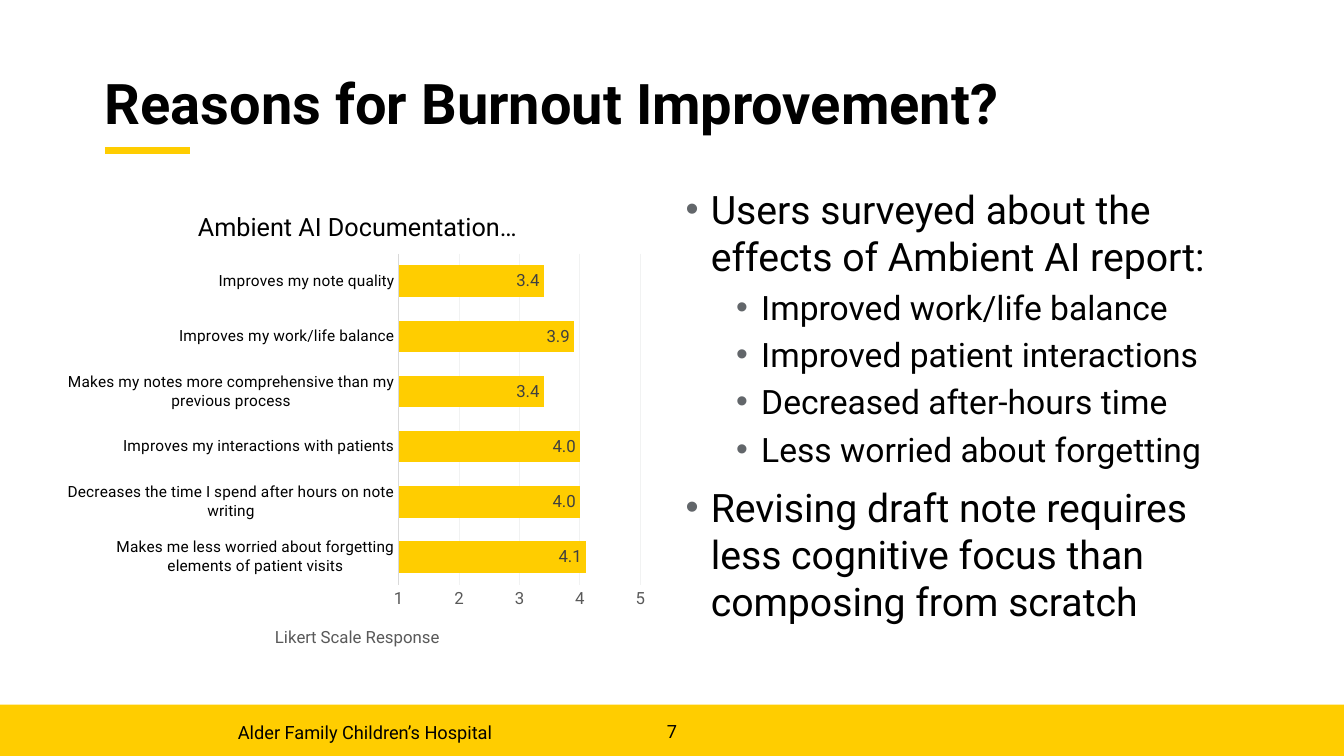
from lxml.etree import SubElement
from pptx import Presentation
from pptx.chart.data import CategoryChartData
from pptx.dml.color import RGBColor
from pptx.enum.chart import XL_CHART_TYPE as ChartType
from pptx.enum.chart import XL_LABEL_POSITION as LabelPosition
from pptx.enum.chart import XL_TICK_MARK as TickMark
from pptx.enum.shapes import MSO_CONNECTOR as Connector
from pptx.enum.shapes import MSO_SHAPE as Shape
from pptx.enum.text import MSO_ANCHOR as Anchor
from pptx.enum.text import PP_ALIGN as Align
from pptx.oxml import parse_xml
from pptx.oxml.ns import nsdecls, qn
from pptx.util import Inches, Pt

FONT = "Roboto"
GOLD, BLACK, GRAY = "FFCD00", "000000", "595959"
BULLET_GRAY, LABEL_GRAY = "62666A", "404040"
AXIS_LINE, GRID_LINE = "D9D9D9", "F1F2F2"

# Font size, indent and space before (points, inches), bullet size (percent)
LEVELS = [
    {"size": 28, "indent": 0.25, "before": 10, "bullet": 95},
    {"size": 24, "indent": 0.75, "before": 5, "bullet": 100},
]
FINDINGS = [
    (0, "Users surveyed about the effects of Ambient AI report:"),
    (1, "Improved work/life balance"),
    (1, "Improved patient interactions"),
    (1, "Decreased after-hours time"),
    (1, "Less worried about forgetting"),
    (0, "Revising draft note requires less cognitive focus than "
        "composing from scratch"),
]
RESPONSES = {
    "Makes me less worried about forgetting elements of patient visits": 4.1,
    "Decreases the time I spend after hours on note writing": 4.0,
    "Improves my interactions with patients": 4.0,
    "Makes my notes more comprehensive than my previous process": 3.4,
    "Improves my work/life balance": 3.9,
    "Improves my note quality": 3.4,
}


def color(hex_value):
    return RGBColor.from_string(hex_value)


def set_values(target, values):
    for name, value in values.items():
        setattr(target, name, value)


def style_font(font, size, hex_value=BLACK, bold=False):
    set_values(font, {"name": FONT, "size": Pt(size), "bold": bold})
    font.color.rgb = color(hex_value)


def style_line(line, hex_value, width):
    line.color.rgb = color(hex_value)
    line.width = Pt(width)


def add_box(slide, left, top, width, height, wrap=True, anchor=Anchor.TOP):
    """Add a text box without margins and return its text frame."""
    box = slide.shapes.add_textbox(*map(Inches, (left, top, width, height)))
    frame = box.text_frame
    margins = ("margin_left", "margin_top", "margin_right", "margin_bottom")
    set_values(frame, dict.fromkeys(margins, 0))
    set_values(frame, {"word_wrap": wrap, "vertical_anchor": anchor})
    return frame


def write(frame, text, size, bold=False, **layout):
    para = frame.paragraphs[0]
    set_values(para, layout)
    span = para.add_run()
    span.text = text
    style_font(span.font, size, bold=bold)


def add_bullet(para, indent, percent):
    properties = para._p.get_or_add_pPr()
    properties.set("marL", str(Inches(indent)))
    properties.set("indent", str(-Inches(0.25)))
    bullet_color = SubElement(properties, qn("a:buClr"))
    SubElement(bullet_color, qn("a:srgbClr"), val=BULLET_GRAY)
    SubElement(properties, qn("a:buSzPct"), val=str(percent * 1000))
    SubElement(properties, qn("a:buFont"), typeface="Arial")
    SubElement(properties, qn("a:buChar"), char="•")


def add_findings(slide):
    frame = add_box(slide, 6.8, 1.84, 5.51, 4.66)
    for index, (level, text) in enumerate(FINDINGS):
        style = LEVELS[level]
        para = frame.add_paragraph() if index else frame.paragraphs[0]
        para.level = level
        para.space_before = Pt(style["before"] if index else 0)
        add_bullet(para, style["indent"], style["bullet"])
        span = para.add_run()
        span.text = text
        style_font(span.font, style["size"])


def place(element, **fractions):
    """Give a chart part a manual layout in fractions of the chart."""
    for layout in element.findall(qn("c:layout")):
        element.remove(layout)
    layout = parse_xml(f"<c:layout {nsdecls('c')}><c:manualLayout/></c:layout>")
    manual = layout[0]
    if "w" in fractions:
        SubElement(manual, qn("c:layoutTarget"), val="inner")
    for axis in "xy":
        SubElement(manual, qn(f"c:{axis}Mode"), val="edge")
    for name, value in fractions.items():
        SubElement(manual, qn(f"c:{name}"), val=str(value))
    text = element.find(qn("c:tx"))
    element.insert(0 if text is None else element.index(text) + 1, layout)


def style_title(title, text, size, hex_value, left, top):
    title.text_frame.text = text
    style_font(title.text_frame.paragraphs[0].runs[0].font, size, hex_value)
    place(title._element, x=left, y=top)


def style_axes(chart):
    categories, scale = chart.category_axis, chart.value_axis
    for axis in (categories, scale):
        set_values(axis, {"major_tick_mark": TickMark.NONE,
                          "minor_tick_mark": TickMark.NONE})
    style_font(categories.tick_labels.font, 11)
    style_line(categories.format.line, AXIS_LINE, 0.75)
    set_values(scale, {"minimum_scale": 1, "maximum_scale": 5,
                       "major_unit": 1, "has_major_gridlines": True})
    set_values(scale.tick_labels, {"number_format": "0",
                                   "number_format_is_linked": False})
    style_font(scale.tick_labels.font, 12, GRAY)
    scale.format.line.fill.background()
    style_line(scale.major_gridlines.format.line, GRID_LINE, 0.75)
    style_title(scale.axis_title, "Likert Scale Response", 12, GRAY,
                0.36, 0.91)


def style_bars(plot):
    set_values(plot, {"gap_width": 75, "overlap": 40,
                      "vary_by_categories": False, "has_data_labels": True})
    labels = plot.data_labels
    set_values(labels, {"show_value": True, "number_format": "0.0",
                        "number_format_is_linked": False,
                        "position": LabelPosition.INSIDE_END})
    style_font(labels.font, 12, LABEL_GRAY)
    fill = plot.series[0].format.fill
    fill.solid()
    fill.fore_color.rgb = color(GOLD)


def add_survey_chart(slide):
    data = CategoryChartData(number_format="0.0")
    data.categories = list(RESPONSES)
    data.add_series("Series 1", list(RESPONSES.values()))
    area = map(Inches, (0.54, 1.85, 5.99, 4.76))
    chart = slide.shapes.add_chart(ChartType.BAR_CLUSTERED, *area, data).chart
    set_values(chart, {"has_legend": False, "has_title": True})
    style_font(chart.font, 12)
    style_title(chart.chart_title, "Ambient AI Documentation…", 18, BLACK,
                0.23, 0.04)
    style_axes(chart)
    style_bars(chart.plots[0])
    place(chart._chartSpace.chart.plotArea, x=0.57, y=0.14, w=0.4, h=0.69)


def add_footer(slide):
    area = map(Inches, (0, 6.99, 13.33, 0.51))
    band = slide.shapes.add_shape(Shape.RECTANGLE, *area)
    band.shadow.inherit = False
    band.fill.solid()
    band.fill.fore_color.rgb = color(GOLD)
    band.line.fill.background()
    write(add_box(slide, 6.34, 7.15, 0.65, 0.26), "7", 13,
          alignment=Align.CENTER)
    write(add_box(slide, 2.36, 7.16, 2.86, 0.35, wrap=False),
          "Alder Family Children’s Hospital", 13)


def add_heading(slide):
    ends = map(Inches, (1.04, 1.49, 1.88, 1.49))
    rule = slide.shapes.add_connector(Connector.STRAIGHT, *ends)
    style_line(rule.line, GOLD, 5)
    SubElement(rule._element.spPr, qn("a:effectLst"))
    frame = add_box(slide, 1.04, 0.58, 11.25, 0.95, anchor=Anchor.MIDDLE)
    write(frame, "Reasons for Burnout Improvement?", 40, bold=True,
          line_spacing=0.9)


def main():
    deck = Presentation()
    set_values(deck, {"slide_width": Inches(13.33),
                      "slide_height": Inches(7.5)})
    slide = deck.slides.add_slide(deck.slide_layouts[6])
    add_footer(slide)
    add_heading(slide)
    add_findings(slide)
    add_survey_chart(slide)
    deck.save("out.pptx")


if __name__ == "__main__":
    main()
